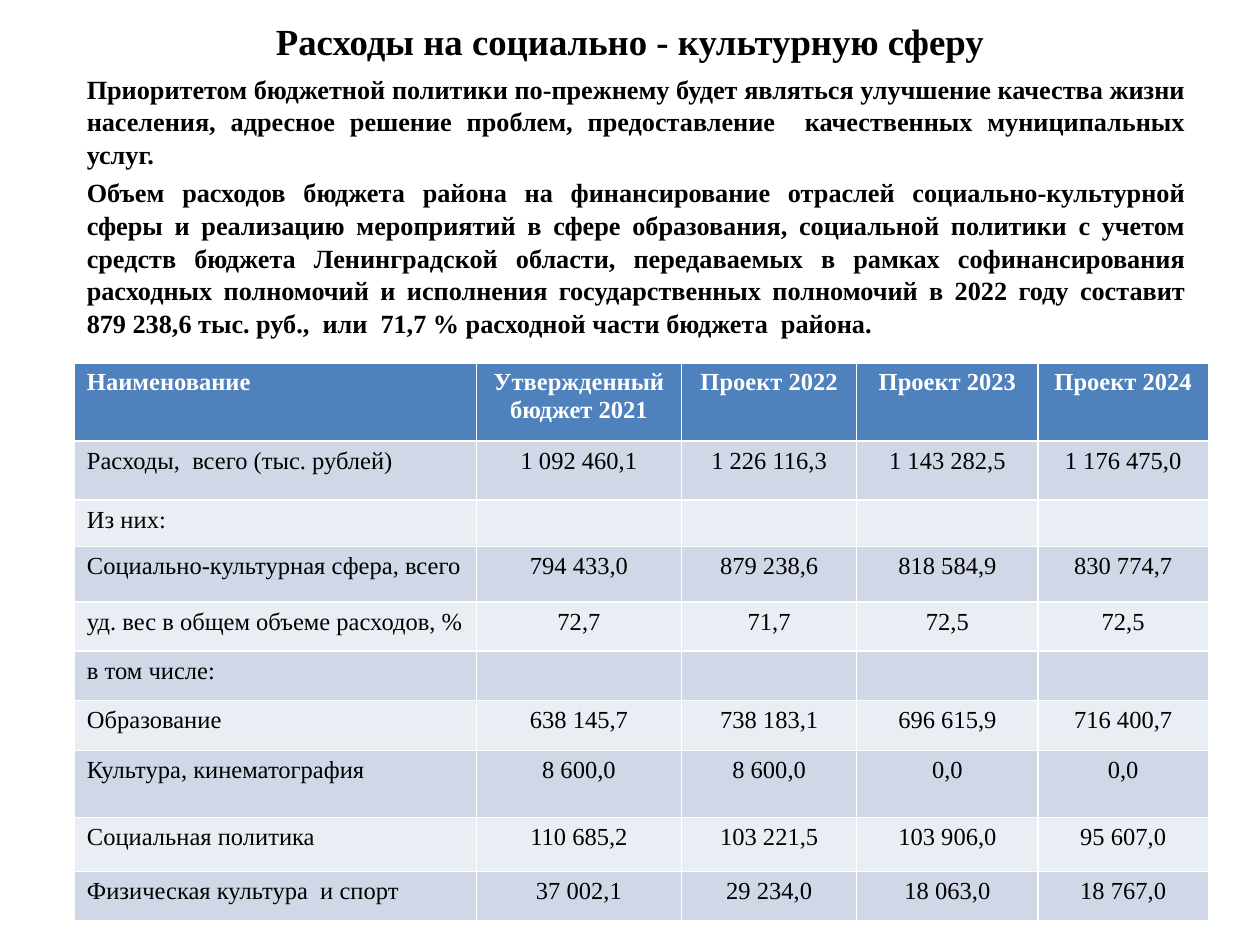
from dataclasses import dataclass

from lxml.etree import SubElement
from pptx import Presentation
from pptx.dml.color import RGBColor
from pptx.enum.text import MSO_ANCHOR, PP_ALIGN
from pptx.oxml.ns import qn
from pptx.util import Inches, Pt


@dataclass(frozen=True)
class Theme:
    face: str = "Times New Roman"
    ink: str = "000000"
    light: str = "FFFFFF"
    head: str = "4F81BD"
    bands: tuple = ("D0D8E8", "E9EDF4")
    title: int = 21
    body: int = 15
    cell: int = 14


THEME = Theme()

TITLE = "Расходы на социально - культурную сферу"
BODY = [
    "Приоритетом бюджетной политики по-прежнему будет являться улучшение "
    "качества жизни населения, адресное решение проблем, предоставление  "
    "качественных муниципальных услуг.",
    "Объем расходов бюджета района на финансирование отраслей "
    "социально-культурной сферы и реализацию мероприятий в сфере "
    "образования, социальной политики с учетом средств бюджета "
    "Ленинградской области, передаваемых в рамках софинансирования "
    "расходных полномочий и исполнения государственных полномочий в 2022 "
    "году составит 879 238,6 тыс. руб.,  или  71,7 % расходной части "
    "бюджета  района.",
]
COLS = [3.19, 1.63, 1.39, 1.44, 1.35]
ROWS = [
    (0.62, "Наименование", "Утвержденный бюджет 2021",
     "Проект 2022", "Проект 2023", "Проект 2024"),
    (0.47, "Расходы,  всего (тыс. рублей)",
     "1 092 460,1", "1 226 116,3", "1 143 282,5", "1 176 475,0"),
    (0.37, "Из них:", "", "", "", ""),
    (0.44, "Социально-культурная сфера, всего",
     "794 433,0", "879 238,6", "818 584,9", "830 774,7"),
    (0.39, "уд. вес в общем объеме расходов, %",
     "72,7", "71,7", "72,5", "72,5"),
    (0.39, "в том числе:", "", "", "", ""),
    (0.4, "Образование", "638 145,7", "738 183,1", "696 615,9", "716 400,7"),
    (0.53, "Культура, кинематография", "8 600,0", "8 600,0", "0,0", "0,0"),
    (0.43, "Социальная политика",
     "110 685,2", "103 221,5", "103 906,0", "95 607,0"),
    (0.39, "Физическая культура  и спорт",
     "37 002,1", "29 234,0", "18 063,0", "18 767,0"),
]


def style(para, size, color, bold, align):
    para.alignment = align
    for run in para.runs:
        font = run.font
        font.name, font.size, font.bold = THEME.face, Pt(size), bold
        font.color.rgb = RGBColor.from_string(color)


def add_text(slide, box, lines, size, align, anchor=MSO_ANCHOR.TOP):
    frame = slide.shapes.add_textbox(*map(Inches, box)).text_frame
    frame.word_wrap = True
    frame.vertical_anchor = anchor
    frame.text = "\n".join(lines)
    for para in frame.paragraphs:
        style(para, size, THEME.ink, True, align)
    return frame


def fill_cell(cell, text, row, col):
    head = row == 0
    color = THEME.head if head else THEME.bands[(row - 1) % 2]
    cell.fill.solid()
    cell.fill.fore_color.rgb = RGBColor.from_string(color)
    cell.text = text
    para = cell.text_frame.paragraphs[0]
    style(para, THEME.cell, THEME.light if head else THEME.ink, head,
          PP_ALIGN.CENTER if col else PP_ALIGN.LEFT)
    if not text:  # an empty cell needs its type size to keep the row low
        SubElement(para._p, qn("a:endParaRPr"), sz=str(THEME.cell * 100))


def add_grid(slide, left, top):
    high = sum(row[0] for row in ROWS)
    box = map(Inches, (left, top, sum(COLS), high))
    table = slide.shapes.add_table(len(ROWS), len(COLS), *box).table
    for col, width in zip(table.columns, COLS):
        col.width = Inches(width)
    for r, (height, *texts) in enumerate(ROWS):
        table.rows[r].height = Inches(height)
        for c, text in enumerate(texts):
            fill_cell(table.cell(r, c), text, r, c)


def main():
    deck = Presentation()
    deck.slide_width, deck.slide_height = Inches(10), Inches(7.5)
    slide = deck.slides.add_slide(deck.slide_layouts[6])
    add_text(slide, (0.5, 0.13, 9, 0.39), [TITLE], THEME.title,
             PP_ALIGN.CENTER, MSO_ANCHOR.MIDDLE)
    body = add_text(slide, (0.59, 0.52, 8.92, 2.6), BODY, THEME.body,
                    PP_ALIGN.JUSTIFY)
    for para in body.paragraphs:
        para.line_spacing = 1.04
    body.paragraphs[1].space_before = Pt(3)
    add_grid(slide, 0.59, 2.88)
    deck.save("out.pptx")


if __name__ == "__main__":
    main()
